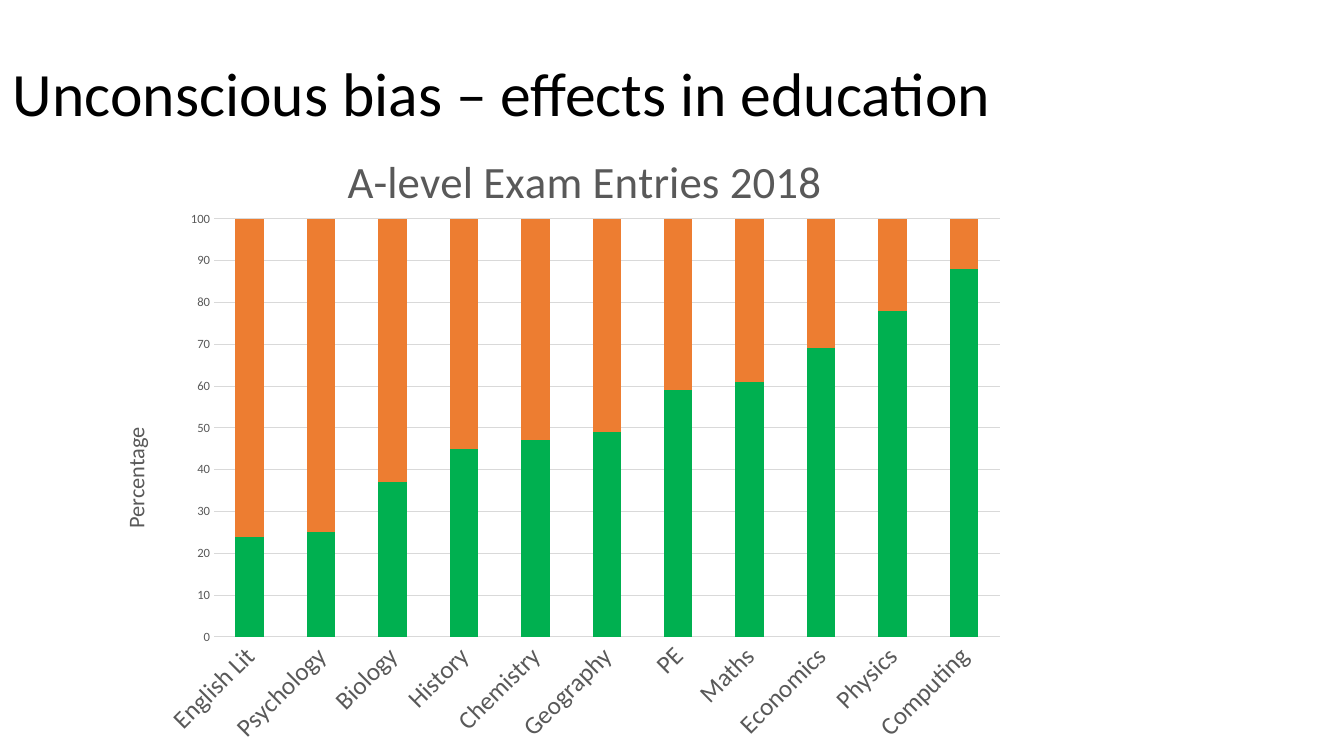
from dataclasses import dataclass
from lxml import etree
from pptx import Presentation
from pptx import util as u
from pptx.chart import data as cd
from pptx.dml import color as dc
from pptx.enum import chart as ec
from pptx.enum import text as et
from pptx.oxml import ns

FACE = "Calibri"
GREY = "595959"
PALE = "D9D9D9"


@dataclass
class Band:
    name: str
    vals: list[int]
    fill: str


SHARES = {
    "English Lit": 24, "Psychology": 25, "Biology": 37, "History": 45,
    "Chemistry": 47, "Geography": 49, "PE": 59, "Maths": 61,
    "Economics": 69, "Physics": 78, "Computing": 88,
}
LOWER = list(SHARES.values())
BANDS = [
    Band("Series 1", LOWER, "00B050"),
    Band("Series 2", [100 - val for val in LOWER], "ED7D31"),
]


def paint(item, tone: str) -> None:
    item.rgb = dc.RGBColor.from_string(tone)


def style(font, size: float, tone: str) -> None:
    font.name = FACE
    font.size = u.Pt(size)
    font.bold = False
    paint(font.color, tone)


def rule(line) -> None:
    paint(line.color, PALE)
    line.width = u.Pt(0.75)


def place(node, spot: int, **marks) -> None:
    for old in node.findall(ns.qn("c:layout")):
        node.remove(old)
    frame = etree.Element(ns.qn("c:layout"))
    inner = etree.SubElement(frame, ns.qn("c:manualLayout"))
    for name, val in marks.items():
        etree.SubElement(inner, ns.qn(f"c:{name}")).set("val", str(val))
    node.insert(spot, frame)


def label(title, words: str, size: float, left: float, top: float) -> None:
    title.text_frame.text = words
    style(title.text_frame.paragraphs[0].runs[0].font, size, GREY)
    place(title.element, 1, xMode="edge", yMode="edge", x=left, y=top)


def turn(body, angle: int) -> None:
    body.set("rot", str(angle * 60000))
    body.set("vert", "horz")


def head(slide) -> None:
    box = slide.shapes.add_textbox(
        u.Inches(0.03), u.Inches(0), u.Inches(10.58), u.Inches(1.45))
    frame = box.text_frame
    frame.word_wrap = True
    frame.vertical_anchor = et.MSO_ANCHOR.MIDDLE
    frame.text = "Unconscious bias – effects in education"
    line = frame.paragraphs[0]
    line.line_spacing = 1.5
    style(line.runs[0].font, 44, "000000")


def graph(slide) -> None:
    data = cd.CategoryChartData(number_format="0")
    data.categories = list(SHARES)
    for band in BANDS:
        data.add_series(band.name, band.vals)
    chart = slide.shapes.add_chart(
        ec.XL_CHART_TYPE.COLUMN_STACKED, u.Inches(0.88), u.Inches(1.15),
        u.Inches(9.21), u.Inches(6.35), data).chart
    style(chart.font, 10, "000000")
    chart.has_legend = False
    chart.has_title = True
    label(chart.chart_title, "A-level Exam Entries 2018", 32, 0.27, 0.04)

    plot = chart.plots[0]
    plot.gap_width = 150
    plot.overlap = 100
    plot.vary_by_categories = False
    for band, bars in zip(BANDS, plot.series):
        bars.format.fill.solid()
        paint(bars.format.fill.fore_color, band.fill)

    base, scale = chart.category_axis, chart.value_axis
    for axis, size in ((base, 18), (scale, 9)):
        axis.major_tick_mark = ec.XL_TICK_MARK.NONE
        axis.minor_tick_mark = ec.XL_TICK_MARK.NONE
        style(axis.tick_labels.font, size, GREY)
    rule(base.format.line)
    turn(chart.element.xpath(".//c:catAx/c:txPr/a:bodyPr")[0], -45)

    scale.minimum_scale = 0
    scale.maximum_scale = 100
    scale.major_unit = 10
    scale.tick_labels.number_format = "0"
    scale.tick_labels.number_format_is_linked = False
    scale.format.line.fill.background()
    scale.has_major_gridlines = True
    rule(scale.major_gridlines.format.line)
    label(scale.axis_title, "Percentage", 16, 0.03, 0.48)
    turn(chart.element.xpath(".//c:valAx/c:title//a:bodyPr")[0], -90)

    area = chart.element.xpath(".//c:plotArea")[0]
    place(area, 0, layoutTarget="inner", xMode="edge", yMode="edge",
          x=0.135, y=0.161, w=0.846, h=0.653)


def main() -> None:
    deck = Presentation()
    deck.slide_width = u.Inches(13.33)
    deck.slide_height = u.Inches(7.5)
    slide = deck.slides.add_slide(deck.slide_layouts[6])
    head(slide)
    graph(slide)
    deck.save("out.pptx")


if __name__ == "__main__":
    main()
